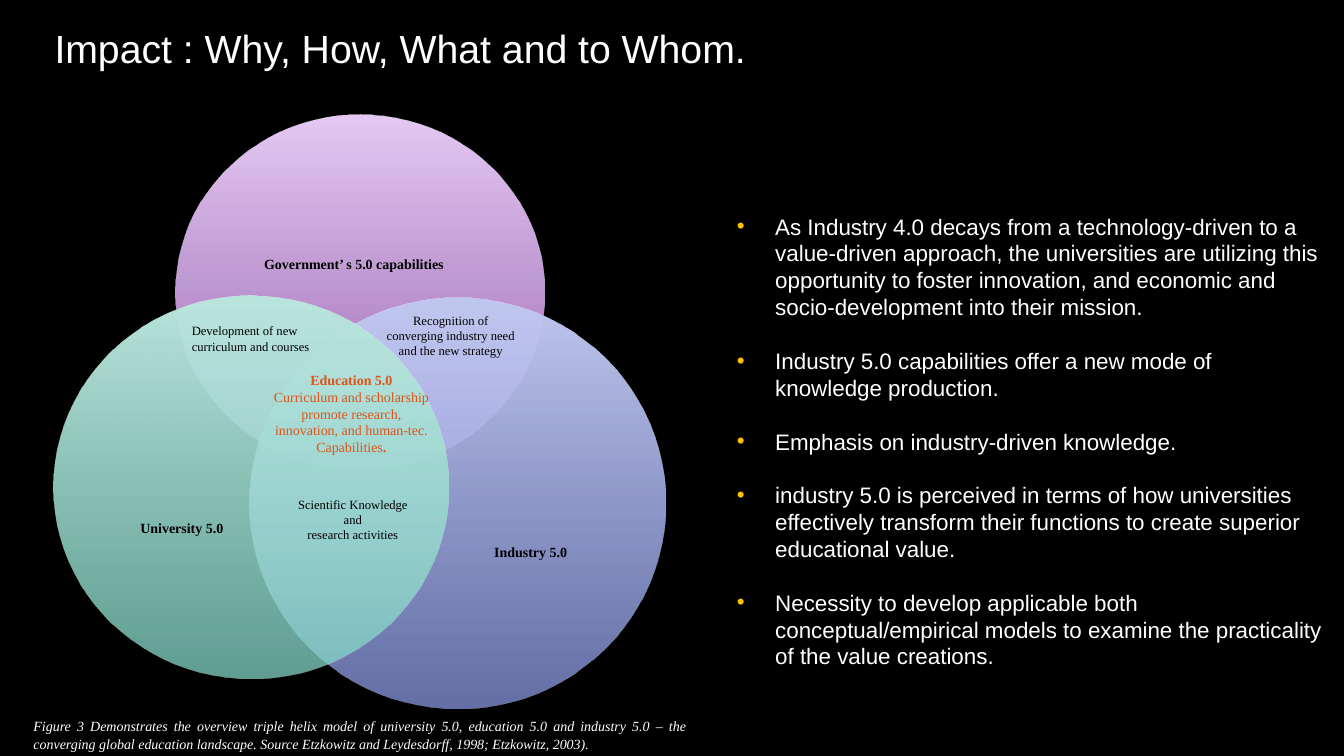
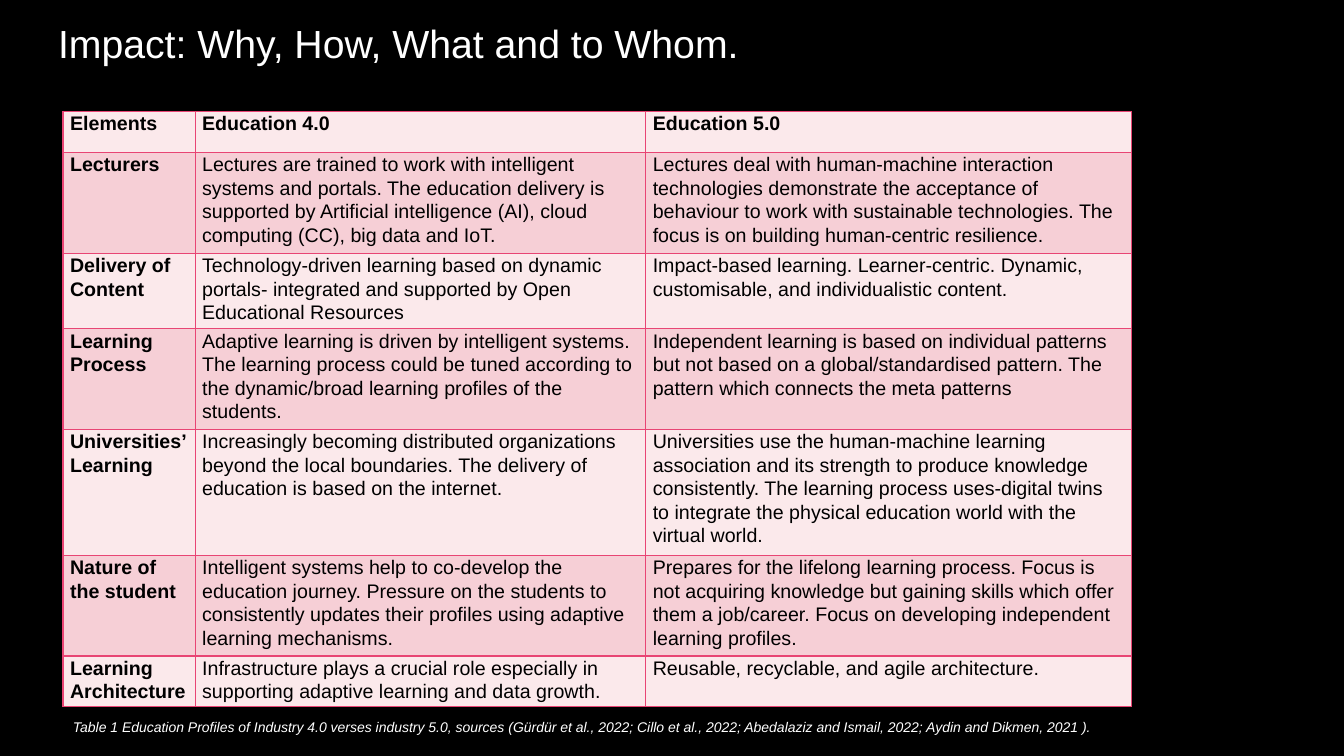
from lxml import etree
from pptx import Presentation
from pptx.dml.color import RGBColor
from pptx.enum.shapes import MSO_SHAPE
from pptx.enum.text import MSO_ANCHOR, MSO_AUTO_SIZE, PP_ALIGN as ALIGN
from pptx.oxml.ns import qn
from pptx.util import Inches, Pt

COLORS = {
    "background": "000000", "light": "FFFFFF", "dark": "000000",
    "bullet": "FFC000", "accent": "DF5417", "border": "E84574",
    "pale row": "FBE9EB", "pink row": "F6CFD6",
}
SERIF, SANS = "Times New Roman", "Arial"

presentation = Presentation()
presentation.slide_width = Inches(13.33)
presentation.slide_height = Inches(7.5)
background = presentation.slide_master.background.fill
background.solid()
background.fore_color.rgb = RGBColor.from_string(COLORS["background"])


def share(left, top, width, height):
    across, down = presentation.slide_width, presentation.slide_height
    return [int(part * whole / 100) for part, whole in
            ((left, across), (top, down), (width, across), (height, down))]


def write(frame, *lines, size=10, font=SANS, color="light", bold=False, bold_first=False,
          italic=False, align=ALIGN.LEFT, spacing=1, before=0, after=0, indent=0, bullet=None):
    frame.word_wrap = True
    frame.auto_size = MSO_AUTO_SIZE.NONE
    frame.vertical_anchor = MSO_ANCHOR.TOP
    for number, line in enumerate(lines):
        paragraph = frame.add_paragraph() if number else frame.paragraphs[0]
        properties = paragraph._p.get_or_add_pPr()
        properties.set("marL", str(Inches(indent)))
        properties.set("indent", str(-Inches(indent) if bullet else 0))
        paragraph.alignment = align
        paragraph.line_spacing = spacing
        paragraph.space_before = Pt(before if number else 0)
        paragraph.space_after = Pt(after)
        if bullet:
            bullet_color = etree.SubElement(properties, qn("a:buClr"))
            etree.SubElement(bullet_color, qn("a:srgbClr"), val=COLORS["bullet"])
            etree.SubElement(properties, qn("a:buFont"), typeface=SANS)
            etree.SubElement(properties, qn("a:buChar"), char=bullet)
        plain, *emphasis = [line] if isinstance(line, str) else line
        for text, strong in [(plain, False)] + [(part, True) for part in emphasis]:
            run = paragraph.add_run()
            run.text = text
            run.font.size = Pt(size)
            run.font.name = font
            run.font.bold = bold or strong or (bold_first and number == 0)
            run.font.italic = italic
            run.font.color.rgb = RGBColor.from_string(COLORS[color])


slides = []
for layout, title, left, top in (
    (1, "Impact : Why, How, What and to Whom.", 0.98, 2.53),
    (5, "Impact: Why, How, What and to Whom.", 1.25, 1.87),
):
    slide = presentation.slides.add_slide(presentation.slide_layouts[layout])
    heading = slide.shapes.title
    heading.left, heading.top, heading.width, heading.height = share(left, top, 78.08, 7.6)
    write(heading.text_frame, title, size=28, indent=0.31)
    slides.append(slide)
helix_slide, profile_slide = slides

for area, top_color, bottom_color in (
    ((13.05, 15.2, 27.45, 46.93), "E7CAF5", "CF91EC"),
    ((18.6, 39.33, 30.9, 54.4), "C1C8EF", "8998E2"),
    ((3.98, 39.07, 29.4, 50.67), "BAE6DD", "84D6C6"),
):
    circle = helix_slide.shapes.add_shape(MSO_SHAPE.OVAL, *share(*area))
    circle.shadow.inherit = False
    circle.line.fill.background()
    circle.fill.gradient()
    circle.fill.gradient_angle = 270
    for stop, color in zip(circle.fill.gradient_stops, (top_color, bottom_color)):
        stop.color.rgb = RGBColor.from_string(color)
    for color, opacity in zip(circle._element.spPr.iter(qn("a:srgbClr")), (100, 74)):
        etree.SubElement(color, qn("a:alpha"), val=str(opacity * 1000))

sphere = {"bold": True, "align": ALIGN.CENTER}
overlap = {"size": 9, "align": ALIGN.CENTER}
for area, lines, style in (
    ((17.33, 33.2, 18, 3.47), ["Government’ s 5.0 capabilities"], sphere),
    ((30.48, 71.2, 18, 3.47), ["Industry 5.0"], sphere),
    ((4.53, 68, 18, 3.47), ["University 5.0"], sphere),
    ((27.98, 40.67, 11.1, 7.07),
     ["Recognition of converging industry need", "and the new strategy"], overlap),
    ((13.53, 42.1, 10.43, 6),
     ["Development of new", "curriculum and courses"], {"size": 9}),
    ((20.1, 65.07, 12.3, 6.93),
     ["Scientific Knowledge", "and", "research activities"], overlap),
    ((19.32, 48.48, 13.65, 15.87),
     ["Education 5.0",
      "Curriculum and scholarship promote research, innovation, and human-tec.",
      ("Capabilities", ".")],
     {"color": "accent", "bold_first": True, "align": ALIGN.CENTER}),
):
    label = helix_slide.shapes.add_textbox(*share(*area))
    write(label.text_frame, *lines, **{"font": SERIF, "color": "dark", **style})

body = helix_slide.placeholders[1]
body.left, body.top, body.width, body.height = share(54.08, 27.47, 45.08, 62.4)
write(
    body.text_frame,
    "As Industry 4.0 decays from a technology-driven to a value-driven approach, the universities are utilizing this opportunity to foster innovation, and economic and socio-development into their mission.",
    "Industry 5.0 capabilities offer a new mode of knowledge production.",
    "Emphasis on industry-driven knowledge.",
    "industry 5.0 is perceived in terms of how universities effectively transform their functions to create superior educational value.",
    "Necessity to develop applicable both conceptual/empirical models to examine the practicality of the value creations.",
    size=16, before=19.2, indent=0.38, bullet="•",
)

PROFILES = [
    ("Elements", "Education 4.0", "Education 5.0"),
    ("Lecturers",
     "Lectures are trained to work with intelligent systems and portals. The education delivery is supported by Artificial intelligence (AI), cloud computing (CC), big data and IoT.",
     "Lectures deal with human-machine interaction technologies demonstrate the acceptance of behaviour to work with sustainable technologies. The focus is on building human-centric resilience."),
    ("Delivery of Content",
     "Technology-driven learning based on dynamic portals- integrated and supported by Open Educational Resources",
     "Impact-based learning. Learner-centric. Dynamic, customisable, and individualistic content."),
    ("Learning Process",
     "Adaptive learning is driven by intelligent systems. The learning process could be tuned according to the dynamic/broad learning profiles of the students.",
     "Independent learning is based on individual patterns but not based on a global/standardised pattern. The pattern which connects the meta patterns"),
    ("Universities’ Learning",
     "Increasingly becoming distributed organizations beyond the local boundaries. The delivery of education is based on the internet.",
     "Universities use the human-machine learning association and its strength to produce knowledge consistently. The learning process uses-digital twins to integrate the physical education world with the virtual world."),
    ("Nature of the student",
     "Intelligent systems help to co-develop the education journey. Pressure on the students to consistently updates their profiles using adaptive learning mechanisms.",
     "Prepares for the lifelong learning process. Focus is not acquiring knowledge but gaining skills which offer them a job/career. Focus on developing independent learning profiles."),
    ("Learning Architecture",
     "Infrastructure plays a crucial role especially in supporting adaptive learning and data growth.",
     "Reusable, recyclable, and agile architecture."),
]
LINE_SHARE = 3.33
row_lines = (1.63, 4, 3, 4, 5, 4, 2)
table = profile_slide.shapes.add_table(
    len(PROFILES), 3, *share(4.69, 14.75, 79.5, LINE_SHARE * sum(row_lines))).table
for column, width in zip(table.columns, (9.83, 33.53, 36.15)):
    column.width = int(presentation.slide_width * width / 100)
for row, line_count in zip(table.rows, row_lines):
    row.height = int(presentation.slide_height * LINE_SHARE * line_count / 100)

for row, texts in enumerate(PROFILES):
    for column, text in enumerate(texts):
        cell = table.cell(row, column)
        cell.margin_left = cell.margin_right = Inches(0.07)
        cell.margin_top = cell.margin_bottom = 0
        cell.fill.solid()
        cell.fill.fore_color.rgb = RGBColor.from_string(
            COLORS["pink row" if row % 2 else "pale row"])
        write(cell.text_frame, text, size=14, color="dark",
              bold=row == 0 or column == 0, spacing=1.07, after=8)
        properties = cell._tc.get_or_add_tcPr()
        for position, side in enumerate(("a:lnL", "a:lnR", "a:lnT", "a:lnB")):
            border = etree.Element(qn(side), w=str(Pt(1)))
            border_fill = etree.SubElement(border, qn("a:solidFill"))
            etree.SubElement(border_fill, qn("a:srgbClr"), val=COLORS["border"])
            properties.insert(position, border)

for slide, area, font, text in (
    (helix_slide, (1.75, 94.13, 50.03, 5.87), SERIF,
     "Figure 3 Demonstrates the overview triple helix model of university 5.0, education 5.0 and industry 5.0 – the converging global education landscape. Source Etzkowitz and Leydesdorff, 1998; Etzkowitz, 2003)."),
    (profile_slide, (4.69, 94.2, 80.85, 3.6), SANS,
     "Table 1 Education Profiles of Industry 4.0 verses industry 5.0, sources (Gürdür et al., 2022; Cillo et al., 2022; Abedalaziz and Ismail, 2022; Aydin and Dikmen, 2021 )."),
):
    caption = slide.shapes.add_textbox(*share(*area))
    write(caption.text_frame, text, font=font, italic=True, align=ALIGN.JUSTIFY, spacing=1.07)

presentation.save("out.pptx")
